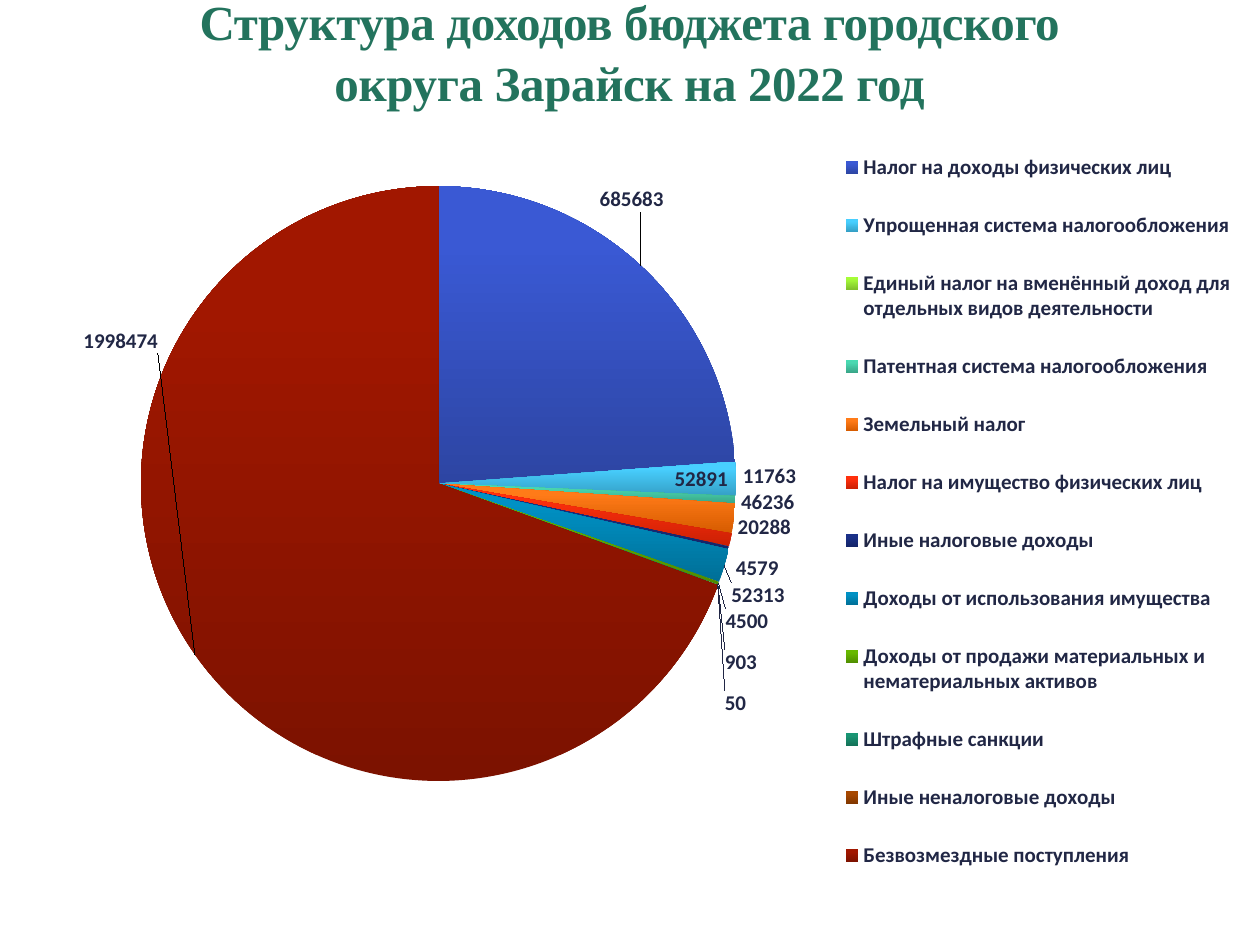
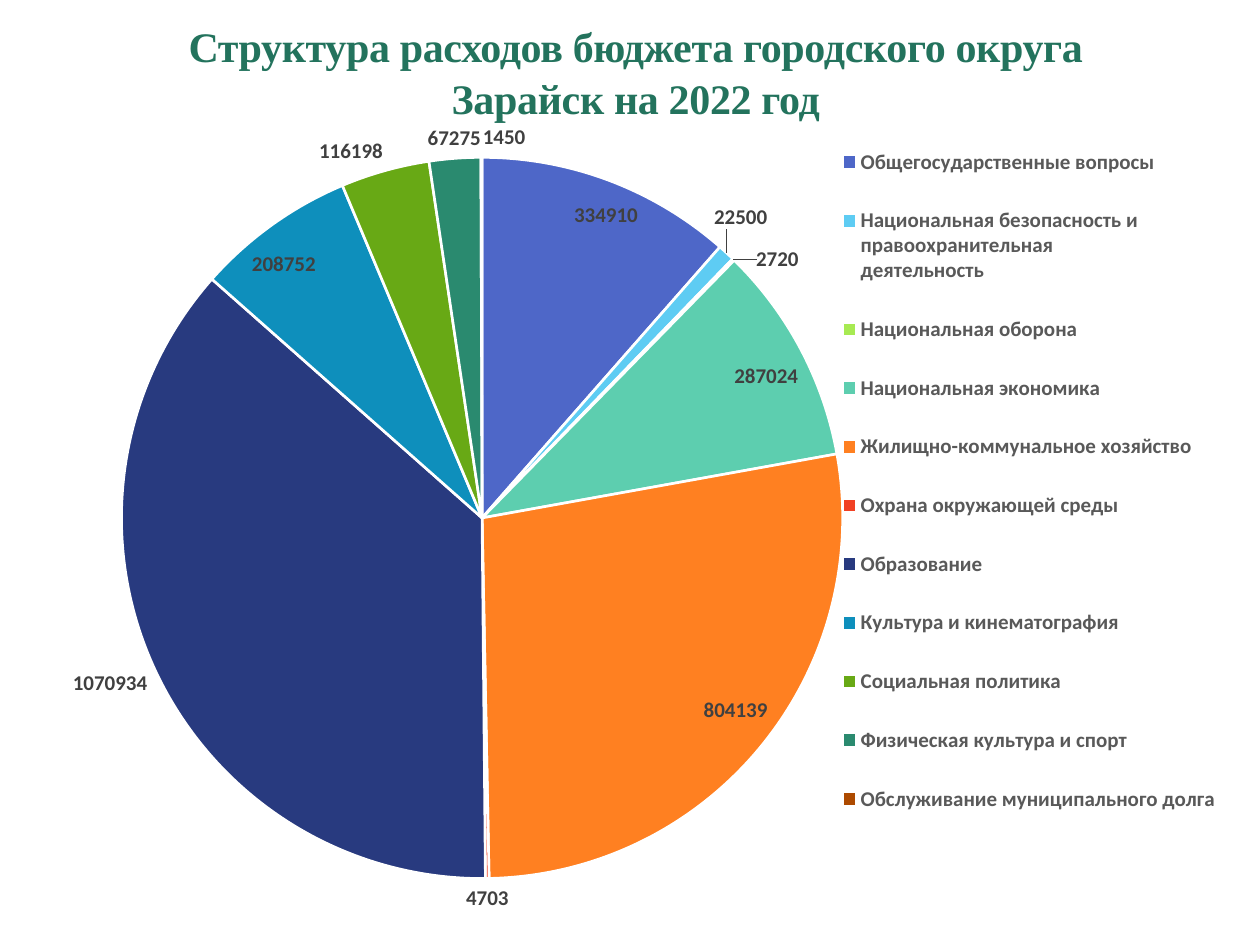
from dataclasses import dataclass, field

from pptx import Presentation
from pptx import chart as ch
from pptx.chart import data as chart_data
from pptx.dml.color import RGBColor
from pptx.enum import chart as chart_enum
from pptx.enum import text
from pptx.oxml import ns, parse_xml
from pptx.util import Pt

COLORS = {
    "title": "23735D",
    "base": "000000",
    "navy": "212745",
    "label_gray": "404040",
    "legend_gray": "595959",
    "border": "FFFFFF",
}
TITLE_FONT = "Times New Roman"
CHART_FONT = "Calibri"
GRADIENT_POSITIONS = (0, 80, 100)


@dataclass(frozen=True)
class Area:
    left: float
    top: float
    width: float
    height: float

    def points(self) -> tuple:
        return Pt(self.left), Pt(self.top), Pt(self.width), Pt(self.height)


@dataclass(frozen=True)
class Heading:
    lines: str
    area: Area
    size: float
    indent: float = 0


@dataclass(frozen=True)
class Sector:
    name: str
    value: int | None
    shades: tuple


@dataclass(frozen=True)
class Budget:
    heading: Heading
    area: Area
    plot: Area
    legend: Area
    legend_position: int
    legend_color: str
    label_color: str
    bordered: bool
    sectors: list
    outside_labels: dict = field(default_factory=dict)


INCOME = Budget(
    heading=Heading("Структура доходов бюджета городского\vокруга Зарайск на 2022 год",
                    Area(-1.44, -13.68, 697.68, 84.96), 28, 24.48),
    area=Area(-167.04, 60.48, 879.12, 459.36),
    plot=Area(0, 0.1, 0.95, 0.74),
    legend=Area(0.73, 0.02, 0.27, 0.97),
    legend_position=chart_enum.XL_LEGEND_POSITION.BOTTOM,
    legend_color="navy",
    label_color="navy",
    bordered=False,
    sectors=[
        Sector("Налог на доходы физических лиц", 685683, ("2D45A3", "3A59D4", "3758D7")),
        Sector("Упрощенная система налогообложения", 52891, ("35A0C6", "48CFFF", "49CFFF")),
        Sector("Единый налог на вменённый доход для отдельных видов деятельности", None,
               ("7FC02C", "A4F939", "A6FE36")),
        Sector("Патентная система налогообложения", 11763, ("39A688", "4AD8B1", "47DCB3")),
        Sector("Земельный налог", 46236, ("D75C00", "FF7B18", "FF7C19")),
        Sector("Налог на имущество физических лиц", 20288, ("CB2004", "FF300D", "FF310F")),
        Sector("Иные налоговые доходы", 4579, ("142569", "1A3088", "182F8B")),
        Sector("Доходы от использования имущества", 52313, ("006F97", "0091C4", "0091C5")),
        Sector("Доходы от продажи материальных и нематериальных активов", 4500,
               ("4F8D00", "67B800", "67B900")),
        Sector("Штрафные санкции", 903, ("147258", "1A9372", "189674")),
        Sector("Иные неналоговые доходы", 50, ("813700", "A74800", "A84800")),
        Sector("Безвозмездные поступления", 1998474, ("7C1200", "A11700", "A21700")),
    ],
    outside_labels={0: (-0.03, -0.06), 11: (-0.02, -0.41)},
)

EXPENSES = Budget(
    heading=Heading("Структура расходов бюджета городского округа\vЗарайск на 2022 год",
                    Area(14.4, -7.92, 697.68, 96.48), 24),
    area=Area(11.52, 66.24, 694.8, 473.76),
    plot=Area(0.08, 0.05, 0.6, 0.87),
    legend=Area(0.66, 0, 0.34, 0.88),
    legend_position=chart_enum.XL_LEGEND_POSITION.RIGHT,
    legend_color="legend_gray",
    label_color="label_gray",
    bordered=True,
    sectors=[
        Sector("Общегосударственные вопросы", 334910, ("4E67C8",)),
        Sector("Национальная безопасность и правоохранительная\nдеятельность", 22500, ("5ECCF3",)),
        Sector("Национальная оборона", 2720, ("A7EA52",)),
        Sector("Национальная экономика", 287024, ("5DCEAF",)),
        Sector("Жилищно-коммунальное хозяйство", 804139, ("FF8021",)),
        Sector("Охрана окружающей среды", 4703, ("F14124",)),
        Sector("Образование", 1070934, ("283A7F",)),
        Sector("Культура и кинематография", 208752, ("0E8FBC",)),
        Sector("Социальная политика", 116198, ("68A915",)),
        Sector("Физическая культура и спорт", 67275, ("2A8A6F",)),
        Sector("Обслуживание муниципального долга", 1450, ("AD4A00",)),
    ],
    outside_labels={6: None},
)


def style_font(font, name: str, size: float, color: str, bold: bool = True) -> None:
    font.name = name
    font.size = Pt(size)
    font.bold = bold
    font.color.rgb = RGBColor.from_string(COLORS[color])


def manual_layout(settings: dict):
    entries = "".join(f'<c:{tag} val="{value}"/>' for tag, value in settings.items())
    return parse_xml(f'<c:layout {ns.nsdecls("c")}><c:manualLayout>{entries}'
                     '</c:manualLayout></c:layout>')


def area_layout(area: Area, inner: bool = False):
    target = {"layoutTarget": "inner"} if inner else {}
    return manual_layout(target | {"xMode": "edge", "yMode": "edge", "x": area.left,
                                   "y": area.top, "w": area.width, "h": area.height})


def add_heading(slide, heading: Heading) -> None:
    box = slide.shapes.add_textbox(*heading.area.points())
    frame = box.text_frame
    frame.word_wrap = True
    frame.vertical_anchor = text.MSO_ANCHOR.MIDDLE
    frame.margin_left = Pt(7.2 + heading.indent)
    frame.text = heading.lines
    paragraph = frame.paragraphs[0]
    paragraph.alignment = text.PP_ALIGN.CENTER
    paragraph.line_spacing = 1.04
    style_font(paragraph.font, TITLE_FONT, heading.size, "title")
    for run in paragraph.runs:
        style_font(run.font, TITLE_FONT, heading.size, "title")
    for properties in box.element.iter(ns.qn("a:rPr")):
        properties.set("spc", "-20")


def paint_sector(point, sector: Sector, bordered: bool) -> None:
    fill = point.format.fill
    if len(sector.shades) == 1:
        fill.solid()
        fill.fore_color.rgb = RGBColor.from_string(sector.shades[0])
    else:
        fill.gradient()
        fill.gradient_angle = 90
    line = point.format.line
    if bordered:
        line.color.rgb = RGBColor.from_string(COLORS["border"])
        line.width = Pt(1.5)
    else:
        line.fill.background()


def set_gradient_stops(chart, sectors: list) -> None:
    shaded = [sector for sector in sectors if len(sector.shades) > 1]
    for stops, sector in zip(chart.element.xpath(".//c:dPt//a:gsLst"), shaded):
        for stop in list(stops):
            stops.remove(stop)
        for position, shade in zip(GRADIENT_POSITIONS, sector.shades):
            stops.append(parse_xml(f'<a:gs {ns.nsdecls("a")} pos="{position * 1000}">'
                                   f'<a:srgbClr val="{shade}"/></a:gs>'))


def add_labels(chart, series, budget: Budget) -> None:
    labels = series.data_labels
    labels.show_value = True
    labels.position = chart_enum.XL_LABEL_POSITION.BEST_FIT
    style_font(labels.font, CHART_FONT, 12, budget.label_color)
    for index, offset in budget.outside_labels.items():
        label = series.points[index].data_label
        style_font(label.font, CHART_FONT, 12, budget.label_color)
        label.position = chart_enum.XL_LABEL_POSITION.OUTSIDE_END
        if offset:
            marker = chart.element.xpath(f'.//c:dLbl/c:idx[@val="{index}"]')[0]
            marker.addnext(manual_layout({"x": offset[0], "y": offset[1]}))


def add_legend(chart, budget: Budget) -> None:
    chart.has_legend = True
    legend = chart.legend
    legend.position = budget.legend_position
    legend.include_in_layout = False
    style_font(legend.font, CHART_FONT, 12, budget.legend_color)
    chart.element.xpath(".//c:legendPos")[0].addnext(area_layout(budget.legend))


def add_pie(slide, budget: Budget) -> None:
    data = chart_data.CategoryChartData()
    data.categories = [sector.name for sector in budget.sectors]
    data.add_series("Series 1", [sector.value for sector in budget.sectors])
    chart = slide.shapes.add_chart(chart_enum.XL_CHART_TYPE.PIE,
                                   *budget.area.points(), data).chart
    chart.has_title = False
    style_font(chart.font, CHART_FONT, 10, "base", bold=False)
    plot = chart.plots[0]
    plot.vary_by_categories = True
    series = plot.series[0]
    for index, sector in enumerate(budget.sectors):
        paint_sector(series.points[index], sector, budget.bordered)
    set_gradient_stops(chart, budget.sectors)
    add_labels(chart, series, budget)
    add_legend(chart, budget)
    plot_area = chart.element.xpath(".//c:plotArea")[0]
    for layout in plot_area.findall(ns.qn("c:layout")):
        plot_area.remove(layout)
    plot_area.insert(0, area_layout(budget.plot, inner=True))


def main() -> None:
    deck = Presentation()
    deck.slide_width, deck.slide_height = Pt(720), Pt(540)
    for budget in (INCOME, EXPENSES):
        slide = deck.slides.add_slide(deck.slide_layouts[6])
        add_heading(slide, budget.heading)
        add_pie(slide, budget)
    deck.save("out.pptx")


if __name__ == "__main__":
    main()
